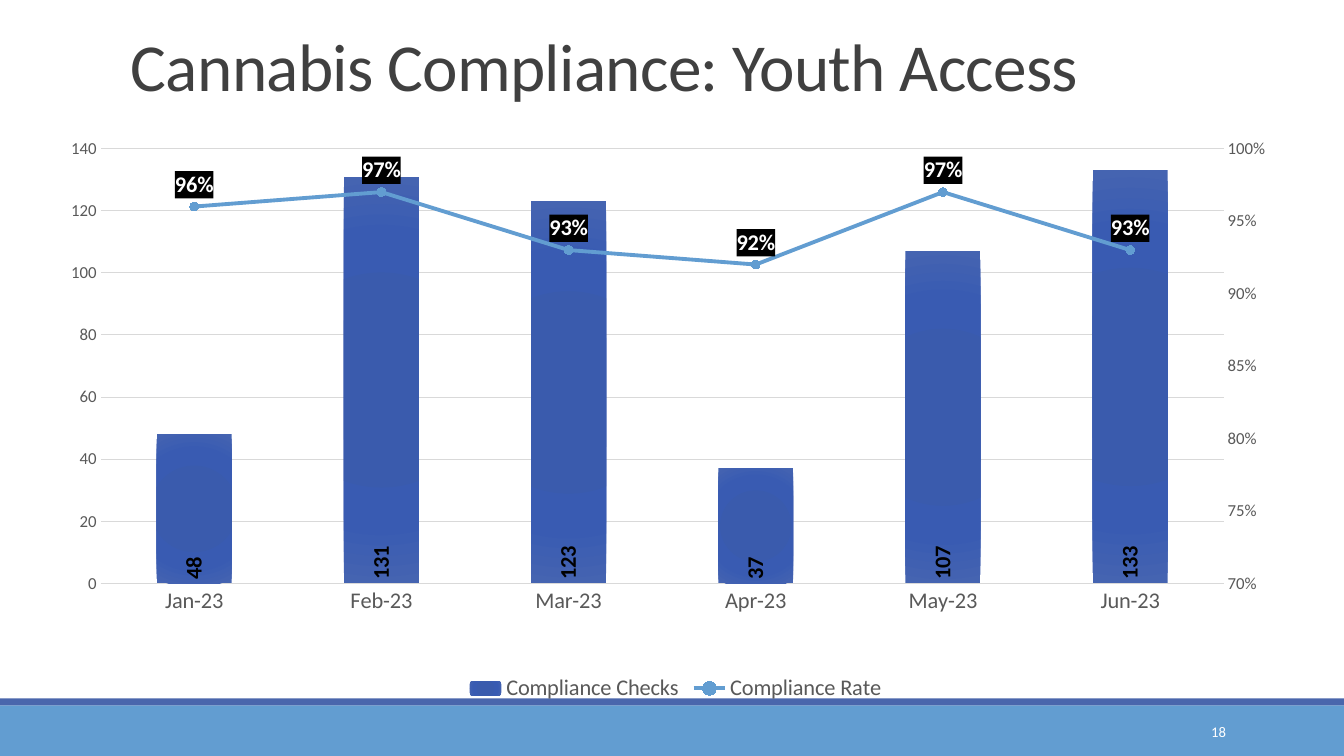
from copy import deepcopy

from lxml import etree
from pptx import Presentation
from pptx import util as u
from pptx.chart import axis as ax
from pptx.chart import data as cd
from pptx.dml.color import RGBColor
from pptx.enum import chart as ch, shapes, text
from pptx.oxml import parse_xml
from pptx.oxml.ns import nsdecls, qn

WIDE, HIGH = u.Inches(13.33), u.Inches(7.5)
FONT = "Calibri"
NAVY = RGBColor(0x4A, 0x66, 0xAC)
SKY = RGBColor(0x62, 0x9D, 0xD1)
MARK = RGBColor(0x4E, 0x97, 0xD8)
DARK = RGBColor(0x40, 0x40, 0x40)
GRAY = RGBColor(0x59, 0x59, 0x59)
PALE = RGBColor(0xD9, 0xD9, 0xD9)
BLACK = RGBColor(0, 0, 0)
WHITE = RGBColor(0xFF, 0xFF, 0xFF)
BLEND = [(0, "3759AE"), (34, "3A5BAD"), (70, "395BB2"), (100, "4564B1")]

MONTHS = [f"{name}-23" for name in "Jan Feb Mar Apr May Jun".split()]
CHECKS = [48, 131, 123, 37, 107, 133]
RATES = [0.96, 0.97, 0.93, 0.92, 0.97, 0.93]


def box(left, top, width, height):
    """Turn inches into a box of slide lengths."""
    return [u.Inches(n) for n in (left, top, width, height)]


def style(font, size, color, bold=False):
    """Set the face, size and colour of a font."""
    font.name, font.size, font.bold = FONT, u.Pt(size), bold
    font.color.rgb = color


def write(slide, area, words, size, color):
    """Place one line of text and return its paragraph and frame."""
    frame = slide.shapes.add_textbox(*area).text_frame
    frame.word_wrap = True
    frame.text = words
    para = frame.paragraphs[0]
    style(para.runs[0].font, size, color)
    return para, frame


def head(slide, area):
    """Place the slide title."""
    para, _ = write(slide, area, "Cannabis Compliance: Youth Access", 48, DARK)
    para.line_spacing = 0.85
    para.runs[0].font._element.set("spc", "-50")


def foot(slide, area):
    """Draw the two bands and the page number in the footer box."""
    left, top, width, height = area
    rim = int(height * 0.12)
    bands = [(top + rim, height - rim, SKY), (top, rim, NAVY)]
    for start, tall, color in bands:
        band = slide.shapes.add_shape(
            shapes.MSO_SHAPE.RECTANGLE, left, start, width, tall)
        band.shadow.inherit = False
        band.fill.solid()
        band.fill.fore_color.rgb = color
        band.line.fill.background()
    page = (left + int(width * 0.8125), top + int(height * 0.23),
            int(width * 0.107), int(height * 0.7))
    para, frame = write(slide, page, "18", 10.5, WHITE)
    para.alignment = text.PP_ALIGN.RIGHT
    frame.vertical_anchor = text.MSO_ANCHOR.MIDDLE


def child(parent, tag, **attrs):
    """Add a chart element below its parent."""
    return etree.SubElement(parent, qn(f"c:{tag}"), attrs)


def blend(series):
    """Fill the bars from the centre outward."""
    stops = "".join(f'<a:gs pos="{pos * 1000}"><a:srgbClr val="{tone}"/></a:gs>'
                    for pos, tone in BLEND)
    rect = " ".join(f'{side}="100000"' for side in "ltrb")
    fill = parse_xml(
        f'<a:gradFill {nsdecls("a")}><a:gsLst>{stops}</a:gsLst>'
        f'<a:path path="circle"><a:fillToRect {rect}/></a:path></a:gradFill>')
    series._element.get_or_add_spPr().insert(0, fill)


def label(series, code, place, color):
    """Show bold values on a series and return the labels."""
    tags = series.data_labels
    tags.show_value = True
    tags.number_format, tags.number_format_is_linked = code, False
    tags.position = place
    style(tags.font, 16, color, True)
    return tags._element


def dress(axis, size):
    """Style the text and line of an axis."""
    axis.major_tick_mark = axis.minor_tick_mark = ch.XL_TICK_MARK.NONE
    style(axis.tick_labels.font, size, GRAY)


def split(chart):
    """Move the second series to a line plot on a right-hand axis."""
    area = chart._chartSpace.find(".//" + qn("c:plotArea"))
    bars = area.find(qn("c:barChart"))
    rate = bars.findall(qn("c:ser"))[1]
    for flag in rate.findall(qn("c:invertIfNegative")):
        rate.remove(flag)
    line = etree.Element(qn("c:lineChart"))
    bars.addnext(line)
    child(line, "grouping", val="standard")
    child(line, "varyColors", val="0")
    line.append(rate)
    child(line, "marker", val="1")
    pair = [deepcopy(area.find(qn(f"c:{tag}"))) for tag in ("catAx", "valAx")]
    for axis, own, other in zip(pair, ("501", "502"), ("502", "501")):
        child(line, "axId", val=own)
        axis.find(qn("c:axId")).set("val", own)
        axis.find(qn("c:crossAx")).set("val", other)
        area.findall(qn("c:valAx"))[-1].addnext(axis)
    ax.CategoryAxis(pair[0]).visible = False
    pair[1].find(qn("c:axPos")).set("val", "r")
    pair[1].find(qn("c:crosses")).set("val", "max")
    right = ax.ValueAxis(pair[1])
    right.has_major_gridlines = False
    right.minimum_scale, right.maximum_scale, right.major_unit = 0.7, 1, 0.05
    right.tick_labels.number_format = "0%"
    right.tick_labels.number_format_is_linked = False


def place(chart, left, top, width, height):
    """Fix the inner plot box as shares of the chart."""
    area = chart._chartSpace.find(".//" + qn("c:plotArea"))
    for old in area.findall(qn("c:layout")):
        area.remove(old)
    lay = etree.Element(qn("c:layout"))
    area.insert(0, lay)
    hand = child(lay, "manualLayout")
    child(hand, "layoutTarget", val="inner")
    child(hand, "xMode", val="edge")
    child(hand, "yMode", val="edge")
    for tag, share in zip("xywh", (left, top, width, height)):
        child(hand, tag, val=str(share))


def graph(slide, area):
    """Draw the checks as bars and the rate as a line."""
    data = cd.CategoryChartData()
    data.categories = MONTHS
    data.add_series("Compliance Checks", CHECKS, "0")
    data.add_series("Compliance Rate", RATES, "0%")
    chart = slide.shapes.add_chart(
        ch.XL_CHART_TYPE.COLUMN_CLUSTERED, *area, data).chart
    style(chart.font, 10, BLACK)
    chart.has_title = False
    chart.has_legend = True
    chart.legend.position = ch.XL_LEGEND_POSITION.BOTTOM
    chart.legend.include_in_layout = False
    style(chart.legend.font, 16, GRAY)

    months, count = chart.category_axis, chart.value_axis
    dress(months, 16)
    months.format.line.color.rgb = PALE
    months.format.line.width = u.Pt(1)
    dress(count, 12)
    count.format.line.fill.background()
    count.has_major_gridlines = True
    grid = count.major_gridlines.format.line
    grid.color.rgb, grid.width = PALE, u.Pt(0.75)
    split(chart)
    count.minimum_scale, count.maximum_scale, count.major_unit = 0, 140, 20
    place(chart, 0.046, 0.039, 0.887, 0.749)

    bars, lines = chart.plots
    bars.gap_width = 150
    bars.vary_by_categories = False
    checks, rate = bars.series[0], lines.series[0]
    blend(checks)
    tags = label(checks, "0", ch.XL_LABEL_POSITION.INSIDE_BASE, BLACK)
    turn = tags.find(".//" + qn("a:bodyPr"))
    turn.set("rot", "-5400000")
    turn.set("vert", "horz")

    rate.smooth = False
    rate.format.line.color.rgb = SKY
    rate.format.line.width = u.Pt(2.75)
    rate.marker.style, rate.marker.size = ch.XL_MARKER_STYLE.CIRCLE, 6
    rate.marker.format.fill.solid()
    rate.marker.format.fill.fore_color.rgb = MARK
    rate.marker.format.line.color.rgb = SKY
    tags = label(rate, "0%", ch.XL_LABEL_POSITION.ABOVE, WHITE)
    tags.find(qn("c:txPr")).addprevious(parse_xml(
        f'<c:spPr {nsdecls("c", "a")}><a:solidFill>'
        f'<a:srgbClr val="{BLACK}"/></a:solidFill></c:spPr>'))


def main():
    """Build the slide and save it."""
    deck = Presentation()
    deck.slide_width, deck.slide_height = WIDE, HIGH
    slide = deck.slides.add_slide(deck.slide_layouts[6])
    foot(slide, box(0, 6.93, 13.33, 0.57))
    head(slide, box(1.2, 0.31, 11, 1.59))
    graph(slide, box(0.42, 1.25, 12.56, 5.76))
    deck.save("out.pptx")


if __name__ == "__main__":
    main()
